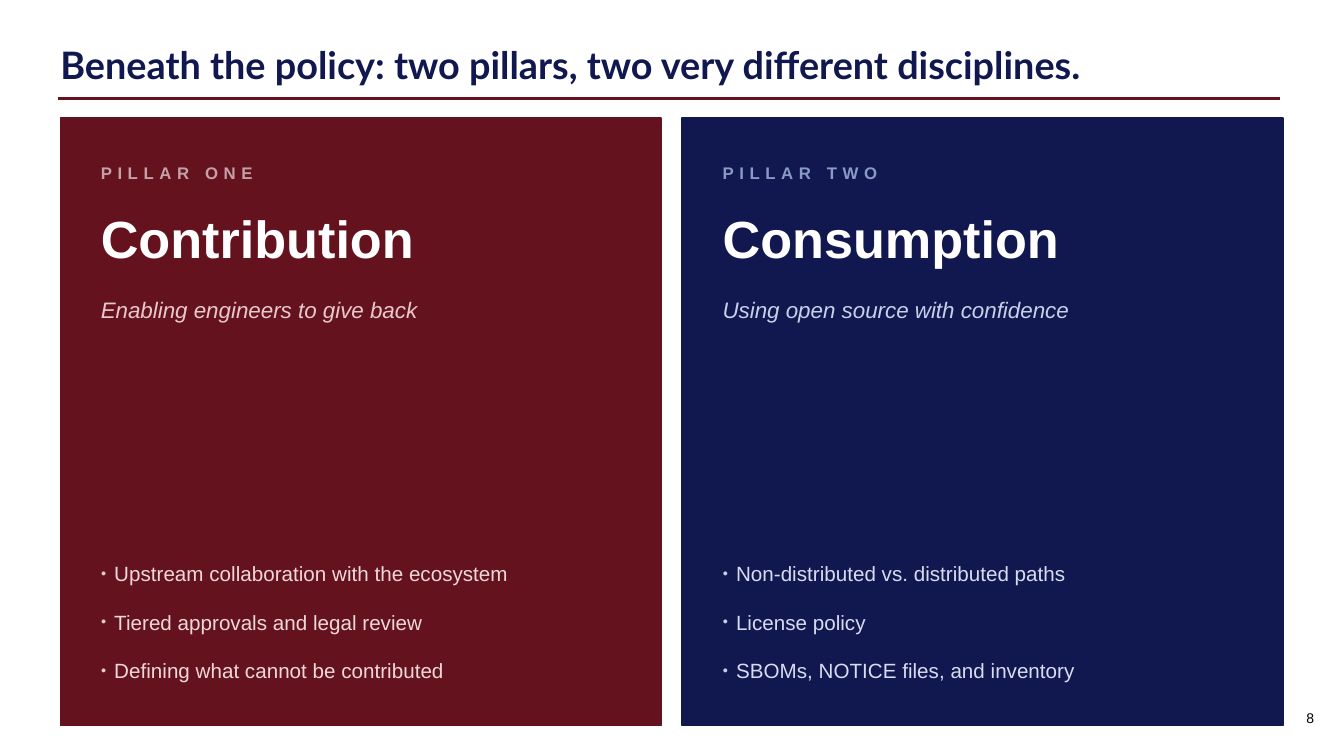
from lxml import etree
from pptx import Presentation
from pptx import util as u
from pptx.dml.color import RGBColor
from pptx.enum import shapes, text
from pptx.oxml import ns

MAROON = RGBColor(0x64, 0x13, 0x1E)
NAVY = RGBColor(0x11, 0x18, 0x4F)
WHITE = RGBColor(0xFF, 0xFF, 0xFF)
BLACK = RGBColor(0x00, 0x00, 0x00)
DUSTY_ROSE = RGBColor(0xC4, 0xA0, 0xA8)
ROSE = RGBColor(0xE8, 0xC8, 0xCC)
PALE_ROSE = RGBColor(0xF0, 0xD8, 0xDA)
DUSTY_BLUE = RGBColor(0x8A, 0x9A, 0xC4)
BLUE = RGBColor(0xC8, 0xD0, 0xE8)
PALE_BLUE = RGBColor(0xD8, 0xDC, 0xF0)

PILLARS = [
    ("PILLAR ONE", "Contribution", "Enabling engineers to give back",
     ["Upstream collaboration with the ecosystem",
      "Tiered approvals and legal review",
      "Defining what cannot be contributed"],
     MAROON, DUSTY_ROSE, ROSE, PALE_ROSE),
    ("PILLAR TWO", "Consumption", "Using open source with confidence",
     ["Non-distributed vs. distributed paths",
      "License policy",
      "SBOMs, NOTICE files, and inventory"],
     NAVY, DUSTY_BLUE, BLUE, PALE_BLUE),
]
MARGIN = 1.52
PANEL_PITCH = 15.67
PADDING = 1.02
TEXT_WIDTH = 13.11
BULLET_TOP = 13.89
BULLET_PITCH = 1.22
BULLET_INDENT = u.Cm(0.34)


def add_text(page, left, top, width, height, words, size, color,
             font="Arial", bold=False, italic=False):
    box = page.shapes.add_textbox(u.Cm(left), u.Cm(top), u.Cm(width), u.Cm(height))
    frame = box.text_frame
    frame.word_wrap = True
    frame.vertical_anchor = text.MSO_ANCHOR.MIDDLE
    frame.margin_left = frame.margin_right = 0
    frame.margin_top = frame.margin_bottom = 0
    span = frame.paragraphs[0].add_run()
    span.text = words
    span.font.name = font
    span.font.size = u.Pt(size)
    span.font.bold = bold
    span.font.italic = italic
    span.font.color.rgb = color
    return frame.paragraphs[0]


def add_bullet(para, color):
    properties = para._p.get_or_add_pPr()
    properties.set("marL", str(BULLET_INDENT))
    properties.set("indent", str(-BULLET_INDENT))
    bullet_color = etree.SubElement(properties, ns.qn("a:buClr"))
    etree.SubElement(bullet_color, ns.qn("a:srgbClr"), val=str(color))
    etree.SubElement(properties, ns.qn("a:buSzPct"), val="45000")
    etree.SubElement(properties, ns.qn("a:buFont"), typeface="Arial")
    etree.SubElement(properties, ns.qn("a:buChar"), char="●")


deck = Presentation()
deck.slide_width = u.Cm(33.87)
deck.slide_height = u.Cm(19.05)
page = deck.slides.add_slide(deck.slide_layouts[6])

add_text(page, MARGIN, 0.69, 30.81, 1.85,
         "Beneath the policy: two pillars, two very different disciplines.",
         27, NAVY, font="Lato", bold=True)

for column, pillar in enumerate(PILLARS):
    label, name, tagline, points, fill, label_color, accent, point_color = pillar
    panel_left = MARGIN + column * PANEL_PITCH
    text_left = panel_left + PADDING

    panel = page.shapes.add_shape(shapes.MSO_SHAPE.RECTANGLE, u.Cm(panel_left),
                                  u.Cm(2.97), u.Cm(15.14), u.Cm(15.32))
    panel.shadow.inherit = False
    panel.fill.solid()
    panel.fill.fore_color.rgb = fill
    panel.line.color.rgb = fill
    panel.line.width = u.Pt(1)

    para = add_text(page, text_left, 3.94, TEXT_WIDTH, 0.84, label, 12, label_color, bold=True)
    para.runs[0].font._element.set("spc", "400")
    add_text(page, text_left, 4.78, TEXT_WIDTH, 2.44, name, 37.3, WHITE, bold=True)
    add_text(page, text_left, 7.21, TEXT_WIDTH, 1.19, tagline, 16, accent, italic=True)

    for row, point in enumerate(points):
        para = add_text(page, text_left, BULLET_TOP + row * BULLET_PITCH, TEXT_WIDTH, 1.12,
                        point, 14.7, point_color)
        add_bullet(para, accent)

rule = page.shapes.add_connector(shapes.MSO_CONNECTOR.STRAIGHT, u.Cm(1.45), u.Cm(2.49),
                                 u.Cm(32.26), u.Cm(2.49))
rule.line.color.rgb = MAROON
rule.line.width = u.Pt(2)
etree.SubElement(rule._element.spPr, ns.qn("a:effectLst"))

add_text(page, 32.92, 17.78, 0.9, 0.6, "8", 10, BLACK)

deck.save("out.pptx")
